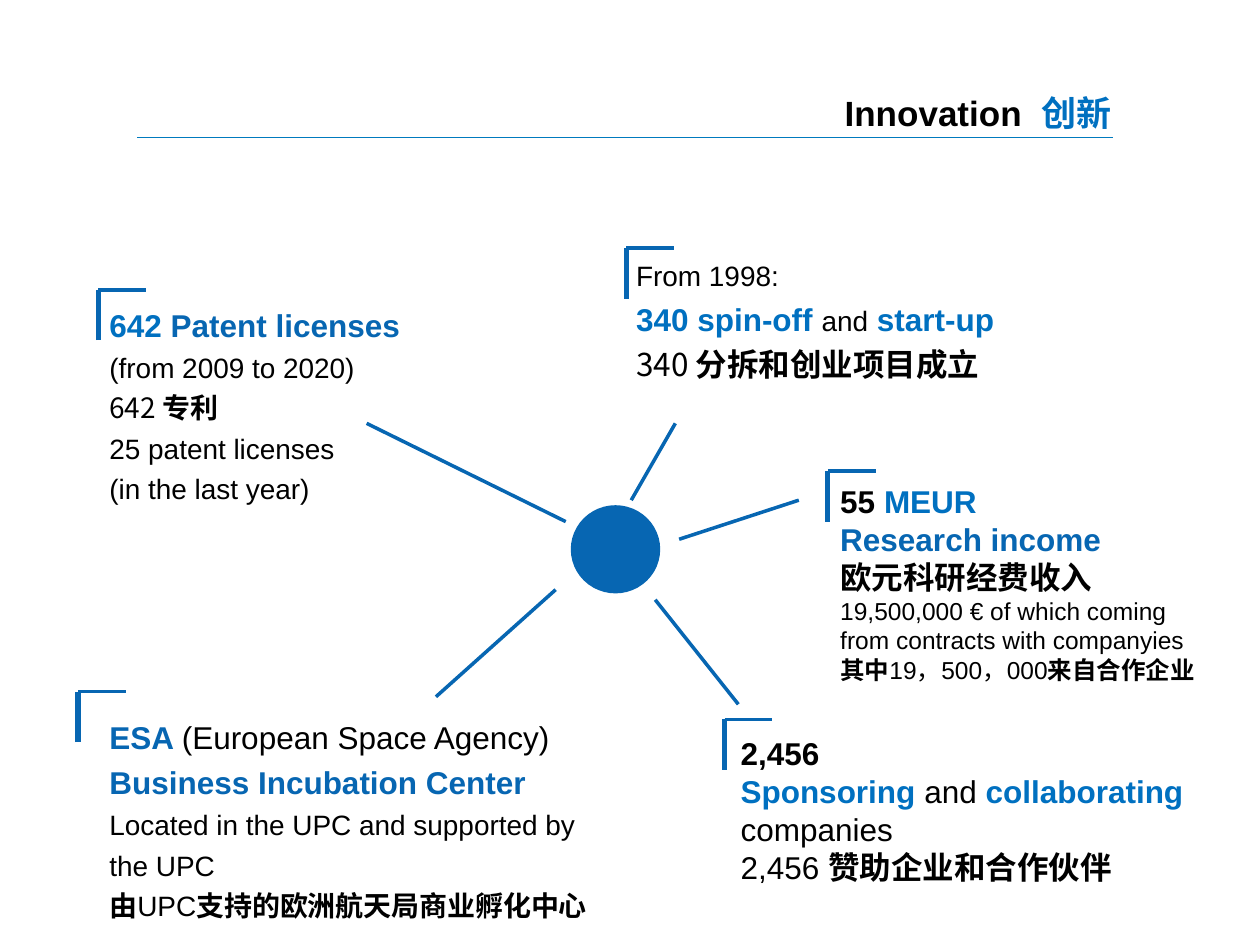
from dataclasses import dataclass

from lxml import etree
from pptx import Presentation
from pptx.dml.color import RGBColor
from pptx.enum.shapes import MSO_CONNECTOR, MSO_SHAPE
from pptx.enum.text import MSO_ANCHOR, PP_ALIGN
from pptx.oxml.ns import qn
from pptx.util import Inches, Pt

STRAIGHT = MSO_CONNECTOR.STRAIGHT
OVAL = MSO_SHAPE.OVAL
TOP = MSO_ANCHOR.TOP
LEFT, RIGHT = PP_ALIGN.LEFT, PP_ALIGN.RIGHT


@dataclass(frozen=True)
class Theme:
    blue: str = "0766B2"
    bright: str = "0070C0"
    rule: str = "007ABE"
    black: str = "000000"
    latin: str = "Arial"
    chinese: str = "Noto Sans CJK SC"
    title: int = 20
    lead: int = 18
    body: int = 16
    small: int = 14


THEME = Theme()


def plain(text, size=THEME.body, font=THEME.latin):
    return text, size, THEME.black, False, font


def bold(text, size=THEME.lead, color=THEME.black):
    return text, size, color, True, THEME.latin


def bright(text, size=THEME.lead):
    return bold(text, size, THEME.bright)


def blue(text):
    return bold(text, THEME.lead, THEME.blue)


class SlideBuilder:
    def __init__(self, slide, theme):
        self.slide = slide
        self.theme = theme

    def line(self, x1, y1, x2, y2, width=2, color=None):
        line = self.slide.shapes.add_connector(
            STRAIGHT, Inches(x1), Inches(y1), Inches(x2), Inches(y2))
        line.line.color.rgb = RGBColor.from_string(color or self.theme.blue)
        line.line.width = Pt(width)
        etree.SubElement(line._element.spPr, qn("a:effectLst"))

    def bracket(self, x, y):
        self.line(x, y, x + 0.38, y)
        self.line(x, y + 0.4, x, y, width=3)

    def hub(self, x, y, width, height):
        hub = self.slide.shapes.add_shape(
            OVAL, Inches(x), Inches(y), Inches(width), Inches(height))
        hub.shadow.inherit = False
        hub.fill.solid()
        hub.fill.fore_color.rgb = RGBColor.from_string(self.theme.blue)
        hub.line.fill.background()

    def text(self, x, y, width, height, paragraphs, spacing=1.0, align=LEFT):
        box = self.slide.shapes.add_textbox(
            Inches(x), Inches(y), Inches(width), Inches(height))
        frame = box.text_frame
        frame.word_wrap = True
        frame.vertical_anchor = TOP
        for index, runs in enumerate(paragraphs):
            paragraph = frame.add_paragraph() if index else frame.paragraphs[0]
            paragraph.alignment = align
            paragraph.line_spacing = spacing
            for content, size, color, is_bold, font in runs:
                run = paragraph.add_run()
                run.text = content
                run.font.size = Pt(size)
                run.font.bold = is_bold
                run.font.color.rgb = RGBColor.from_string(color)
                run.font.name = font
                etree.SubElement(run.font._element, qn("a:ea"),
                                 typeface=self.theme.chinese)


def main():
    deck = Presentation()
    deck.slide_width, deck.slide_height = Inches(10), Inches(7.5)
    page = SlideBuilder(deck.slides.add_slide(deck.slide_layouts[6]), THEME)
    lead, body, small = THEME.lead, THEME.body, THEME.small

    # Title and rule
    page.line(1.09, 1.09, 8.83, 1.09, width=0.75, color=THEME.rule)
    page.text(2.9, 0.68, 6.02, 0.5,
              [[bold("Innovation  ", THEME.title), bright("创新", THEME.title)]],
              align=RIGHT)

    # Hub and spokes
    page.hub(4.53, 4.01, 0.71, 0.7)
    spokes = [(3.46, 5.53, 4.41, 4.68), (2.91, 3.36, 4.49, 4.14),
              (5.01, 3.97, 5.36, 3.36), (5.39, 4.28, 6.34, 3.97),
              (5.2, 4.76, 5.86, 5.59)]
    for spoke in spokes:
        page.line(*spoke)

    # Corner brackets
    for corner in [(0.78, 2.3), (4.97, 1.97), (6.57, 3.74),
                   (5.75, 5.71), (0.62, 5.49)]:
        page.bracket(*corner)

    # Patents
    page.text(0.77, 2.32, 2.89, 2.08, [
        [bright("642 "), blue("Patent licenses")],
        [plain("(from 2009 to 2020)")],
        [plain("642 ", font=THEME.chinese), bold("专利", body)],
        [plain("25 patent licenses")],
        [plain("(in the last year)")],
    ], spacing=1.2)

    # Spin-offs
    page.text(4.95, 1.95, 3.62, 1.72, [
        [plain("From 1998:")],
        [bright("340 spin-off "), plain("and"), bright(" start-up")],
        [plain("340 ", lead, THEME.chinese), bold("分拆和创业项目成立")],
    ], spacing=1.2)

    # Research income
    page.text(6.57, 3.78, 3.05, 2.19, [
        [bold("55 "), bright("MEUR")],
        [blue("Research income")],
        [bold("欧元科研经费收入")],
        [plain("19,500,000 € of which coming from contracts with companyies",
               small)],
        [bold("其中", small), plain("19，500，000", small),
         bold("来自合作企业", small)],
    ])

    # Sponsoring companies
    page.text(5.78, 5.78, 4.14, 1.4, [
        [bold("2,456")],
        [bright("Sponsoring "), plain("and", lead),
         bright(" collaborating "), plain("companies", lead)],
        [plain("2,456 ", lead), bold("赞助企业和合作伙伴")],
    ])

    # Business incubation
    page.text(0.77, 5.59, 4.11, 1.9, [
        [blue("ESA "), plain("(European Space Agency)", lead)],
        [blue("Business Incubation Center")],
        [plain("Located in the UPC and supported by the UPC")],
        [bold("由", body), plain("UPC"),
         bold("支持的欧洲航天局商业孵化中心", body)],
    ], spacing=1.2)

    deck.save("out.pptx")


if __name__ == "__main__":
    main()
